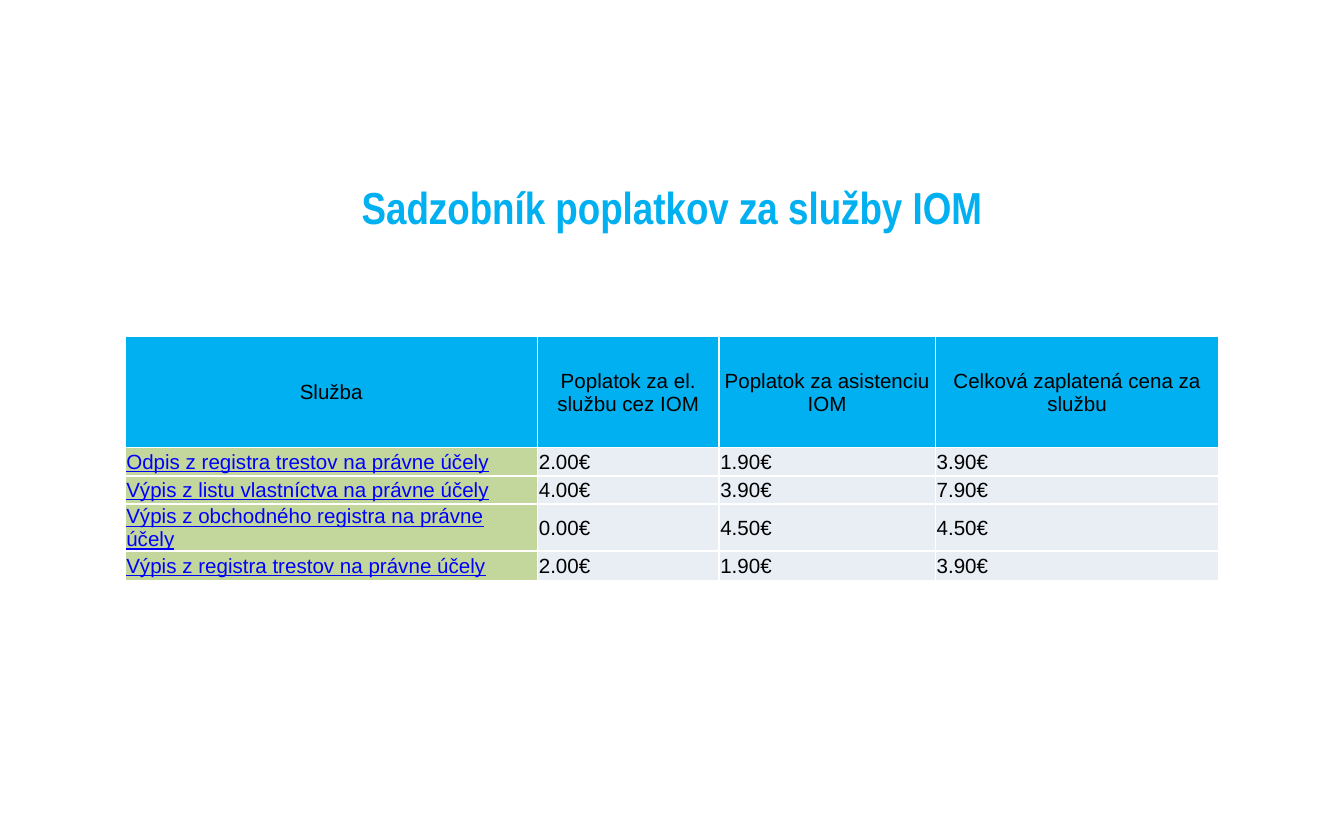
"""Build a slide with the price list of IOM services."""
from dataclasses import dataclass
from typing import Any

import pptx
import pptx.dml.color
import pptx.enum.text
import pptx.oxml
import pptx.oxml.ns
import pptx.util

PX = 9144
ALIGN = pptx.enum.text.PP_ALIGN
MIDDLE = pptx.enum.text.MSO_ANCHOR.MIDDLE


@dataclass(frozen=True)
class Theme:
    accent: str = "00B0F0"
    service: str = "C3D69B"
    price: str = "E9EDF4"
    text: str = "000000"
    link: str = "0000FF"
    border: str = "FFFFFF"
    title_font: str = "Arial Narrow"
    body_font: str = "Arial"
    title_size: int = 24
    body_size: int = 11
    border_width: int = 1


@dataclass(frozen=True)
class Service:
    name: str
    fee: float
    assistance: float

    def prices(self) -> list[str]:
        total = self.fee + self.assistance
        return [f"{v:.2f}€" for v in (self.fee, self.assistance, total)]


@dataclass(frozen=True)
class CellStyle:
    fill: str
    color: str
    align: Any = ALIGN.LEFT
    underline: bool = False


THEME = Theme()
HEADER = CellStyle(THEME.accent, THEME.text, ALIGN.CENTER)
NAME = CellStyle(THEME.service, THEME.link, underline=True)
PRICE = CellStyle(THEME.price, THEME.text)

TITLE = "Sadzobník poplatkov za služby IOM"
HEADINGS = ["Služba", "Poplatok za el. službu cez IOM",
            "Poplatok za asistenciu IOM", "Celková zaplatená cena za službu"]
SERVICES = [
    Service("Odpis z registra trestov na právne účely", 2, 1.9),
    Service("Výpis z listu vlastníctva na právne účely", 4, 3.9),
    Service("Výpis z obchodného registra na právne účely", 0, 4.5),
    Service("Výpis z registra trestov na právne účely", 2, 1.9),
]
COLUMNS = [307, 135, 161, 211]
ROWS = [83, 21, 21, 21, 22]


def px(n: int) -> pptx.util.Emu:
    """Turn px into EMU."""
    return pptx.util.Emu(n * PX)


def apply(obj: Any, values: dict[str, Any]) -> None:
    """Set attributes from a dict."""
    for key, value in values.items():
        setattr(obj, key, value)


def write(tf: Any, text: str, color: str, align: Any, font: dict[str, Any]) -> None:
    """Put one formatted run into a text frame."""
    p = tf.paragraphs[0]
    p.alignment = align
    r = p.add_run()
    r.text = text
    apply(r.font, font)
    r.font.color.rgb = pptx.dml.color.RGBColor.from_string(color)


def add_borders(cell: Any) -> None:
    """Draw the four borders of a cell."""
    ns = pptx.oxml.ns.nsdecls("a")
    width = pptx.util.Pt(THEME.border_width)
    tc_pr = cell._tc.get_or_add_tcPr()
    for side in "LRTB":
        tc_pr.append(pptx.oxml.parse_xml(
            f'<a:ln{side} {ns} w="{width}"><a:solidFill>'
            f'<a:srgbClr val="{THEME.border}"/></a:solidFill></a:ln{side}>'))


def fill_cell(cell: Any, text: str, style: CellStyle) -> None:
    """Format a cell and write its text."""
    add_borders(cell)
    cell.fill.solid()
    cell.fill.fore_color.rgb = pptx.dml.color.RGBColor.from_string(style.fill)
    apply(cell, {"margin_left": px(1), "margin_right": px(1), "margin_top": px(1),
                 "margin_bottom": 0, "vertical_anchor": MIDDLE})
    write(cell.text_frame, text, style.color, style.align,
          {"name": THEME.body_font, "size": pptx.util.Pt(THEME.body_size),
           "bold": False, "underline": style.underline})


def add_title(s: Any) -> None:
    """Place and format the slide title."""
    sp = s.shapes.title
    apply(sp, {"left": px(50), "top": px(113), "width": px(900), "height": px(82)})
    apply(sp.text_frame, {"word_wrap": True, "vertical_anchor": MIDDLE,
                          "auto_size": pptx.enum.text.MSO_AUTO_SIZE.NONE})
    write(sp.text_frame, TITLE, THEME.accent, ALIGN.CENTER,
          {"name": THEME.title_font, "size": pptx.util.Pt(THEME.title_size), "bold": True})


def add_price_table(s: Any) -> None:
    """Add the table of services and fees."""
    table = s.shapes.add_table(len(ROWS), len(COLUMNS), px(93), px(250),
                               px(sum(COLUMNS)), px(sum(ROWS))).table
    for column, width in zip(table.columns, COLUMNS):
        column.width = px(width)
    for row, height in zip(table.rows, ROWS):
        row.height = px(height)
    lines = [HEADINGS] + [[service.name, *service.prices()] for service in SERVICES]
    for i, line in enumerate(lines):
        for j, text in enumerate(line):
            style = HEADER if i == 0 else NAME if j == 0 else PRICE
            fill_cell(table.cell(i, j), text, style)


def main() -> None:
    """Build and save the presentation."""
    prs = pptx.Presentation()
    apply(prs, {"slide_width": px(1000), "slide_height": px(625)})
    s = prs.slides.add_slide(prs.slide_layouts[5])
    add_title(s)
    add_price_table(s)
    prs.save("out.pptx")


if __name__ == "__main__":
    main()
